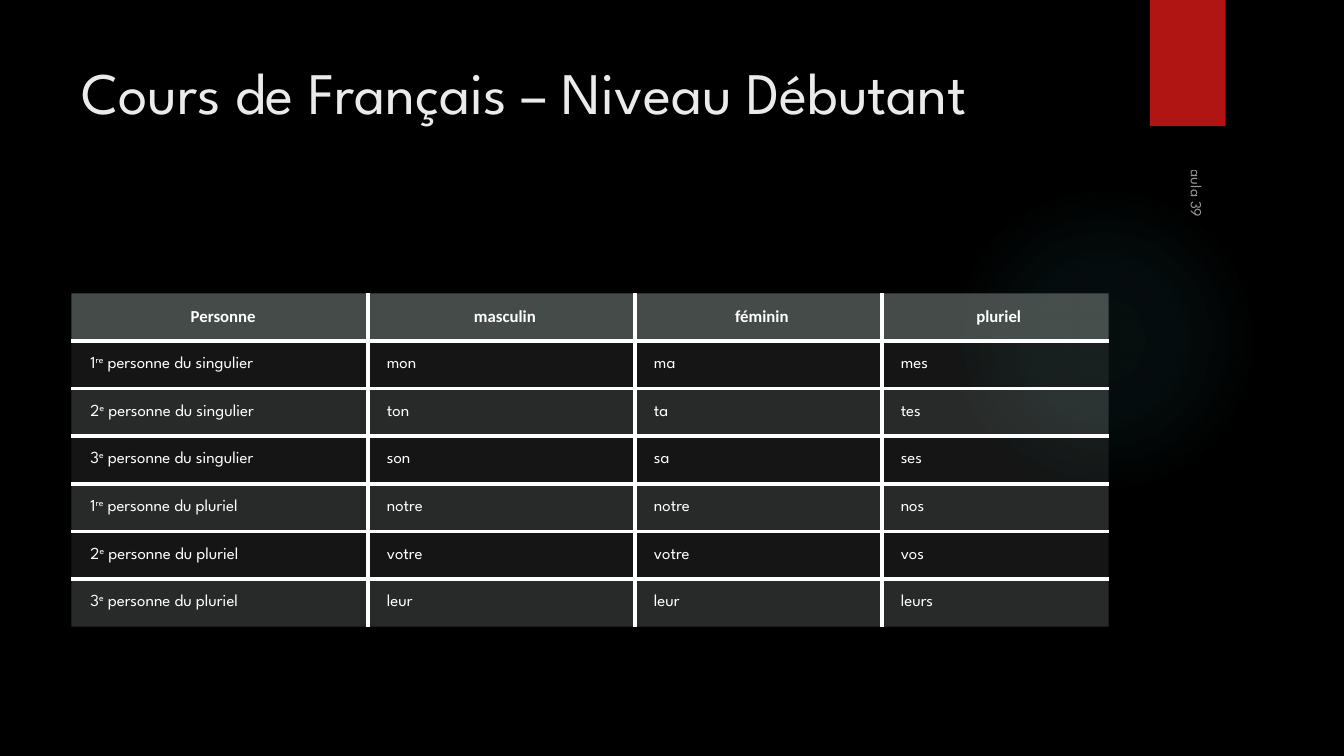
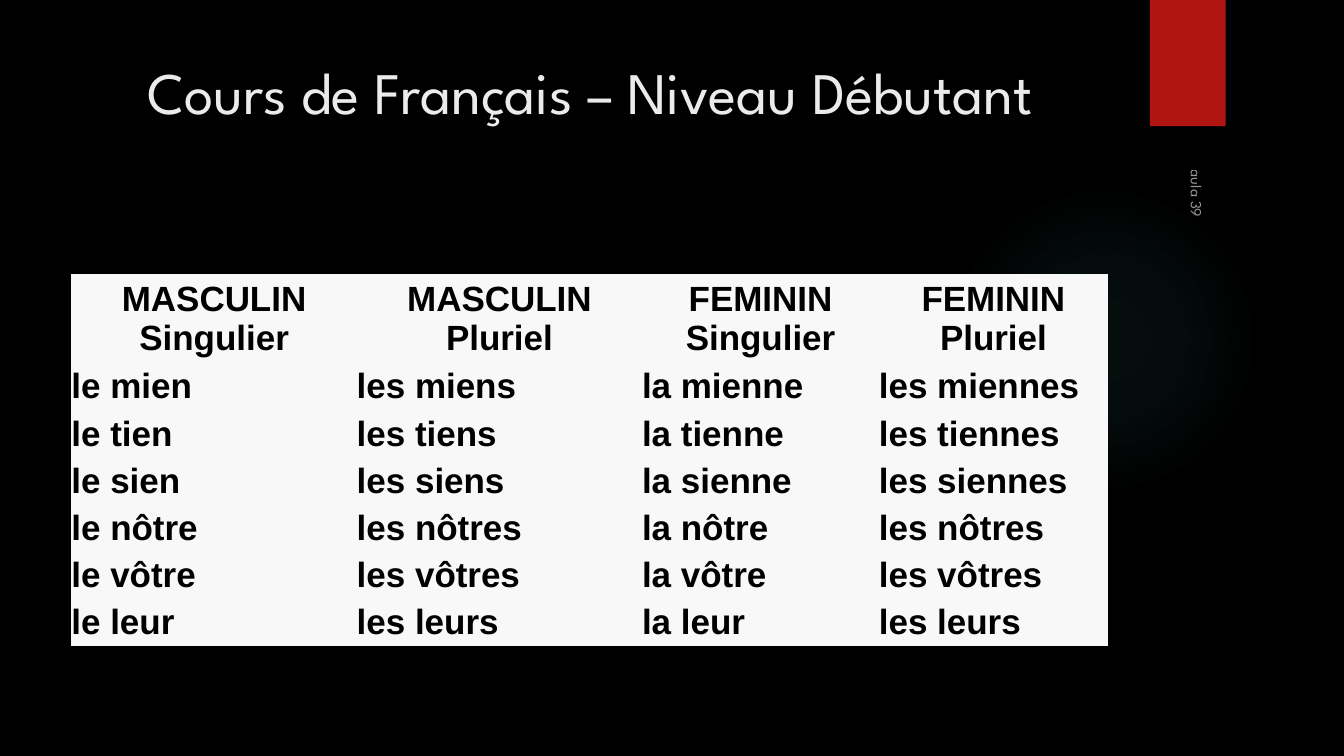
from itertools import product

from lxml import etree
from pptx import Presentation
from pptx import util as u
from pptx.dml.color import RGBColor
from pptx.enum import shapes, text
from pptx.oxml.ns import nsdecls, qn

COLORS = {
    "background": "000000", "glow": "50B9C1", "tab": "B01513",
    "title": "EBEBEB", "white": "FFFFFF", "black": "000000",
    "header": "636B68", "band": "878E8B", "paper": "F8F8F8",
}
FONT = "League Spartan"
TITLE = "Cours de Français – Niveau Débutant"
LESSON = "aula 39"
NO_STYLE = "{2D5ABB26-0587-4C30-8999-92F81FD0307C}"
TABLE_X = 1.8
CENTER = text.PP_ALIGN.CENTER

ORDINALS = [("1", "re"), ("2", "e"), ("3", "e")]
POSSESSIVES = [
    ("mon", "ma", "mes"), ("ton", "ta", "tes"), ("son", "sa", "ses"),
    ("notre", "notre", "nos"), ("votre", "votre", "vos"), ("leur", "leur", "leurs"),
]
PRONOUNS = [
    ("MASCULIN Singulier", "MASCULIN Pluriel", "FEMININ Singulier", "FEMININ Pluriel"),
    ("le mien", "les miens", "la mienne", "les miennes"),
    ("le tien", "les tiens", "la tienne", "les tiennes"),
    ("le sien", "les siens", "la sienne", "les siennes"),
    ("le nôtre", "les nôtres", "la nôtre", "les nôtres"),
    ("le vôtre", "les vôtres", "la vôtre", "les vôtres"),
    ("le leur", "les leurs", "la leur", "les leurs"),
]


def paint(fill, color, alpha=100):
    """Give a fill a solid colour with an opacity in percent."""
    fill.solid()
    fill.fore_color.rgb = RGBColor.from_string(COLORS[color])
    if alpha < 100:
        clr = fill._xPr.find(qn("a:solidFill"))[0]
        etree.SubElement(clr, qn("a:alpha")).set("val", str(alpha * 1000))


def write(tf, runs, size=12, color="white", alpha=100, font=FONT, bold=False,
          align=None, after=None):
    """Write one paragraph from a string or from (text, baseline) pairs."""
    p = tf.paragraphs[0]
    p.alignment = align
    if after is not None:
        p.space_after = u.Pt(after)
    for content, baseline in [(runs, 0)] if isinstance(runs, str) else runs:
        r = p.add_run()
        r.text = content
        r.font.size, r.font.name, r.font.bold = u.Pt(size), font, bold
        paint(r.font.fill, color, alpha)
        if baseline:
            r.font._element.set("baseline", str(baseline * 1000))


def add_plain(slide, kind, x, y, w, h):
    """Add a preset shape without line or shadow."""
    sp = slide.shapes.add_shape(kind, u.Cm(x), u.Cm(y), u.Cm(w), u.Cm(h))
    sp.shadow.inherit = False
    sp.line.fill.background()
    return sp


def add_glow(slide, x, y, size):
    """Add a round glow that fades towards its edge."""
    sp = add_plain(slide, shapes.MSO_SHAPE.OVAL, x, y, size, size)
    sp.fill.background()
    stops = "".join(
        f'<a:gs pos="{pos}000"><a:srgbClr val="{COLORS["glow"]}">'
        f'<a:alpha val="{alpha}000"/></a:srgbClr></a:gs>'
        for pos, alpha in [(0, 7), (36, 6), (69, 0)])
    grad = etree.fromstring(
        f'<a:gradFill {nsdecls("a")}><a:gsLst>{stops}</a:gsLst><a:path path="circle">'
        '<a:fillToRect l="50000" t="50000" r="50000" b="50000"/></a:path></a:gradFill>')
    sp_pr = sp._element.spPr
    sp_pr.replace(sp_pr.find(qn("a:noFill")), grad)


def add_text(slide, content, x, y, w, h, anchor=text.MSO_ANCHOR.TOP, rotation=0, **style):
    """Add a wrapping text box."""
    sp = slide.shapes.add_textbox(u.Cm(x), u.Cm(y), u.Cm(w), u.Cm(h))
    sp.rotation = rotation
    tf = sp.text_frame
    tf.word_wrap = True
    tf.vertical_anchor = anchor
    write(tf, content, **style)


def add_lesson_slide(prs, align=None):
    """Add a slide with the shared background, red tab, title and footer."""
    slide = prs.slides.add_slide(prs.slide_layouts[6])
    paint(slide.background.fill, "background")
    add_glow(slide, 23.9, 4.65, 7.82)
    paint(add_plain(slide, shapes.MSO_SHAPE.RECTANGLE, 28.98, 0, 1.91, 3.18).fill, "tab")
    add_text(slide, TITLE, TABLE_X, 1.27, 26.14, 3.89, size=42, color="title", align=align)
    add_text(slide, LESSON, 24.87, 8.97, 10.72, 0.84, anchor=text.MSO_ANCHOR.BOTTOM,
             rotation=90, size=11, alpha=60, after=6)
    return slide


def add_borders(cell, sides):
    """Draw 3 pt white lines on the sides flagged in left, right, top, bottom order."""
    tc_pr = cell._tc.get_or_add_tcPr()
    for i, (side, shown) in enumerate(zip("LRTB", sides)):
        ln = etree.Element(qn(f"a:ln{side}"), w=str(u.Pt(3)))
        fill = etree.SubElement(ln, qn("a:solidFill" if shown else "a:noFill"))
        if shown:
            etree.SubElement(fill, qn("a:srgbClr"), val=COLORS["white"])
        tc_pr.insert(i, ln)


def add_grid(slide, x, y, widths, heights, rows, fill_of, head, body, insets, ruled=False):
    """Add a table whose header and body rows have their own text style."""
    frame = slide.shapes.add_table(len(heights), len(widths), u.Cm(x), u.Cm(y),
                                   u.Cm(sum(widths)), u.Cm(sum(heights)))
    table = frame.table
    table.first_row = table.horz_banding = False
    table._tbl.tblPr.find(qn("a:tableStyleId")).text = NO_STYLE
    for column, width in zip(table.columns, widths):
        column.width = u.Cm(width)
    for row, height in zip(table.rows, heights):
        row.height = u.Cm(height)
    last_row, last_col = len(heights) - 1, len(widths) - 1
    for i, j in product(range(len(heights)), range(len(widths))):
        cell = table.cell(i, j)
        cell.vertical_anchor = text.MSO_ANCHOR.MIDDLE
        cell.margin_left, cell.margin_right = u.Cm(insets[0]), u.Cm(insets[1])
        cell.margin_top = cell.margin_bottom = u.Cm(insets[1])
        write(cell.text_frame, rows[i][j], **(body if i else head))
        paint(cell.fill, *fill_of(i))
        if ruled:
            add_borders(cell, (j > 0, j < last_col, i > 0, i < last_row))


def add_possessives(prs):
    """Build the slide of possessive determiners."""
    slide = add_lesson_slide(prs)
    persons = [[(n, 0), (suffix, 30), (f" personne du {number}", 0)]
               for number, (n, suffix) in product(("singulier", "pluriel"), ORDINALS)]
    rows = [("Personne", "masculin", "féminin", "pluriel")]
    rows += [(person, *forms) for person, forms in zip(persons, POSSESSIVES)]
    add_grid(slide, TABLE_X, 7.39, [7.47, 6.73, 6.22, 5.72], [1.2] * len(rows), rows,
             lambda i: ("band", 15 if i % 2 else 30) if i else ("header", 70),
             head=dict(font="Calibri", bold=True, align=CENTER), body={},
             insets=(0.48, 0.3), ruled=True)


def add_pronouns(prs):
    """Build the slide of possessive pronouns."""
    slide = add_lesson_slide(prs, align=CENTER)
    body = dict(size=25, font="Arial", color="black", bold=True)
    add_grid(slide, TABLE_X, 6.91, [7.19, 7.19, 5.97, 5.77],
             [2.24] + [1.19] * (len(PRONOUNS) - 1), PRONOUNS, lambda i: ("paper",),
             head=dict(body, align=CENTER), body=body, insets=(0, 0))


def main():
    """Build and save the presentation."""
    prs = Presentation()
    prs.slide_width, prs.slide_height = u.Cm(33.87), u.Cm(19.05)
    add_possessives(prs)
    add_pronouns(prs)
    prs.save("out.pptx")


if __name__ == "__main__":
    main()
